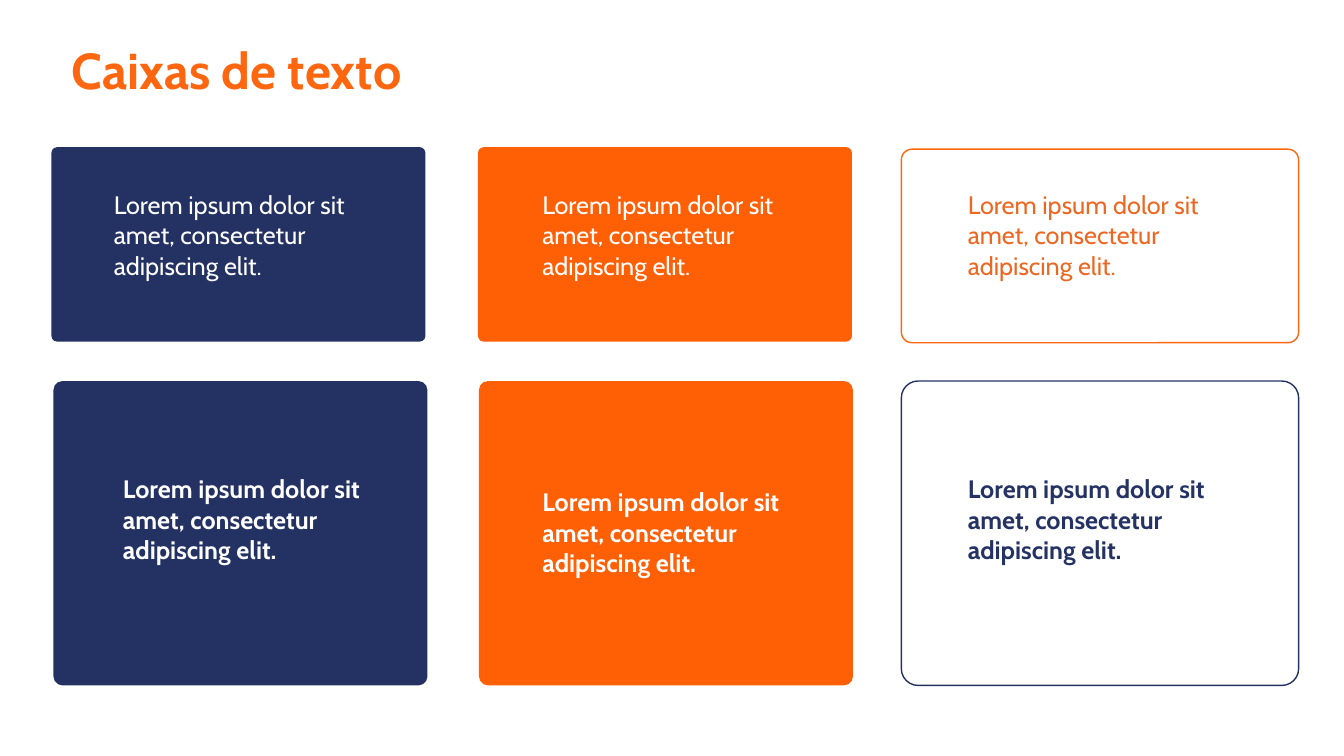
from typing import NamedTuple

from pptx import Presentation
from pptx.dml.color import RGBColor
from pptx.enum.shapes import MSO_SHAPE
from pptx.enum.text import MSO_ANCHOR, MSO_AUTO_SIZE
from pptx.slide import Slide
from pptx.util import Inches, Pt

ROUND = MSO_SHAPE.ROUNDED_RECTANGLE
MIDDLE = MSO_ANCHOR.MIDDLE
TOP = MSO_ANCHOR.TOP
GROW = MSO_AUTO_SIZE.SHAPE_TO_FIT_TEXT
FIXED = MSO_AUTO_SIZE.NONE

FONT = "Cabin"
LOREM = "Lorem ipsum dolor sit amet, consectetur adipiscing elit."
COLORS = {
    "navy": "243263",
    "ink": "243264",
    "orange": "FF5F05",
    "bright": "FF6610",
    "rust": "EC6822",
    "white": "FFFFFF",
}


class Area(NamedTuple):
    left: float
    top: float
    width: float
    height: float


class Card(NamedTuple):
    area: Area
    color: str
    filled: bool


class Label(NamedTuple):
    area: Area
    text: str
    color: str
    size: int = 18
    bold: bool = False
    title: bool = False


def note(left: float, top: float, color: str, bold: bool = False) -> Label:
    """Describe the sample text of one card."""
    height = 1.31 if bold else 1.01
    return Label(Area(left, top, 2.61, height), LOREM, color, bold=bold)


CARDS = [
    Card(Area(0.51, 1.46, 3.71, 1.93), "navy", True),
    Card(Area(4.74, 1.46, 3.71, 1.93), "orange", True),
    Card(Area(8.94, 1.48, 3.94, 1.92), "bright", False),
    Card(Area(0.53, 3.78, 3.71, 3.02), "navy", True),
    Card(Area(4.75, 3.78, 3.71, 3.02), "orange", True),
    Card(Area(8.94, 3.78, 3.94, 3.02), "navy", False),
]
LABELS = [
    Label(Area(0.61, 0, 11.5, 1.45), "Caixas de texto", "bright", 36, True, True),
    note(1.03, 1.83, "white"),
    note(5.28, 1.83, "white"),
    note(9.5, 1.83, "rust"),
    note(1.12, 4.65, "white", True),
    note(5.28, 4.78, "white", True),
    note(9.5, 4.65, "ink", True),
]


def paint(name: str) -> RGBColor:
    return RGBColor.from_string(COLORS[name])


def draw_card(slide: Slide, card: Card) -> None:
    shape = slide.shapes.add_shape(ROUND, *map(Inches, card.area))
    shape.shadow.inherit = False
    if card.filled:
        shape.adjustments[0] = 0.03
        shape.fill.solid()
        shape.fill.fore_color.rgb = paint(card.color)
        shape.line.fill.background()
    else:
        shape.adjustments[0] = 0.055
        shape.fill.background()
        shape.line.color.rgb = paint(card.color)
        shape.line.width = Pt(1)


def draw_label(slide: Slide, label: Label) -> None:
    frame = slide.shapes.add_textbox(*map(Inches, label.area)).text_frame
    frame.word_wrap = True
    frame.auto_size = FIXED if label.title else GROW
    frame.vertical_anchor = MIDDLE if label.title else TOP
    para = frame.paragraphs[0]
    if label.title:
        para.line_spacing = 0.9
    run = para.add_run()
    run.text = label.text
    run.font.name = FONT
    run.font.size = Pt(label.size)
    run.font.bold = label.bold
    run.font.color.rgb = paint(label.color)


def main() -> None:
    deck = Presentation()
    deck.slide_width = Inches(13.33)
    deck.slide_height = Inches(7.5)
    slide = deck.slides.add_slide(deck.slide_layouts[6])
    for card in CARDS:
        draw_card(slide, card)
    for label in LABELS:
        draw_label(slide, label)
    deck.save("out.pptx")


if __name__ == "__main__":
    main()
